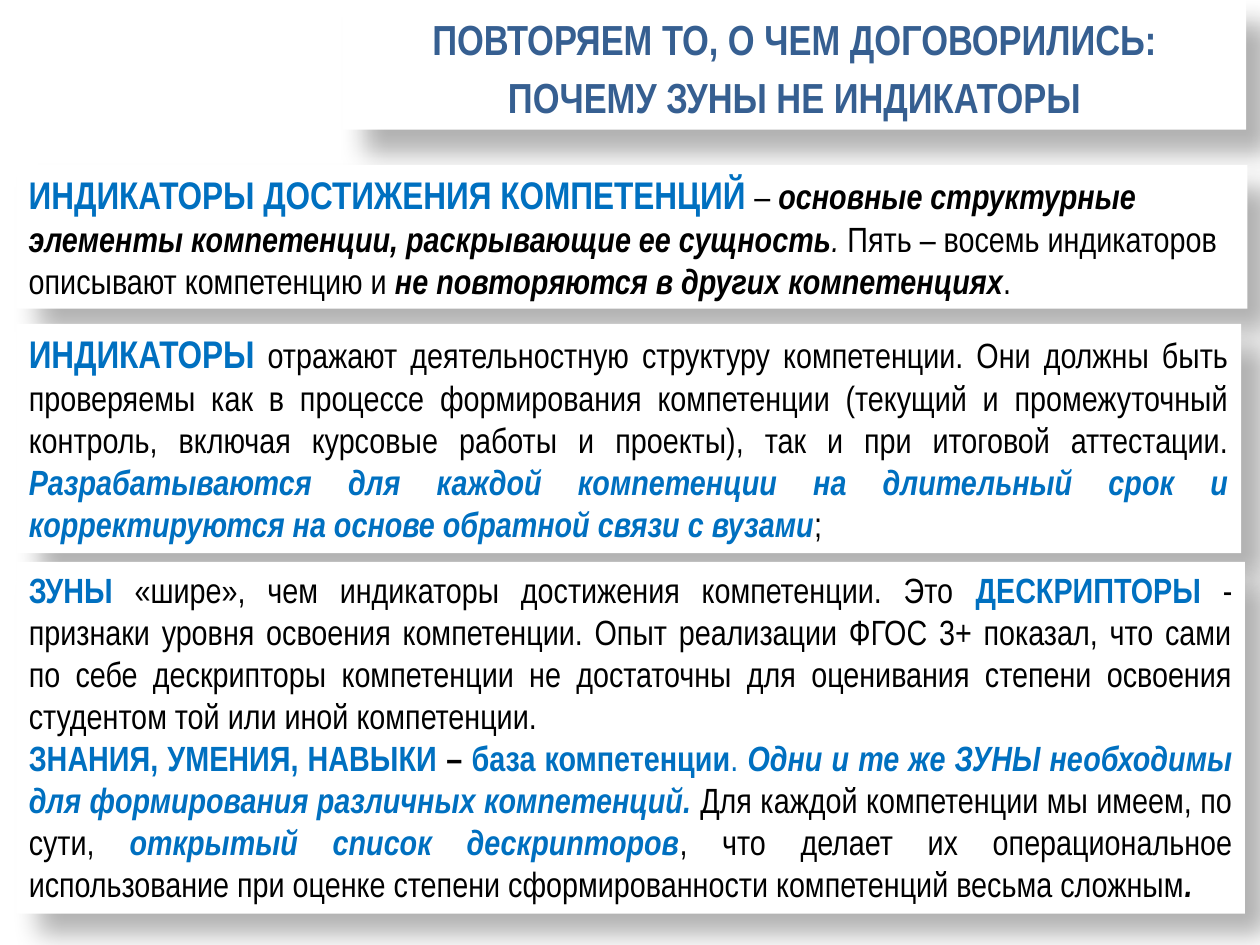
import pptx
import pptx.dml.color
import pptx.enum.shapes
import pptx.enum.text
import pptx.oxml
import pptx.oxml.ns
import pptx.util

COLORS = {"card": "FFFFFF", "title": "365F91", "accent": "0070C0",
          "body": "000000", "shadow": "000000"}
FONT = "Arial Narrow"
ALIGN = pptx.enum.text.PP_ALIGN

# style: colour, size, bold, italic
STYLES = {
    "title": ("title", 24, True, False),
    "heading": ("accent", 22, True, False),
    "term": ("accent", 20, True, False),
    "claim": ("accent", 20, True, True),
    "mark": ("accent", 20, False, False),
    "plain": ("body", 20, False, False),
    "slanted": ("body", 20, False, True),
    "bold": ("body", 20, True, False),
    "stress": ("body", 20, True, True),
}

TITLE = [[("ПОВТОРЯЕМ ТО, О ЧЕМ ДОГОВОРИЛИСЬ: ПОЧЕМУ ЗУНЫ НЕ ИНДИКАТОРЫ", "title")]]

DEFINITION = [[
    ("ИНДИКАТОРЫ ДОСТИЖЕНИЯ КОМПЕТЕНЦИЙ ", "heading"),
    ("– ", "plain"),
    ("основные структурные элементы компетенции, раскрывающие ее сущность", "stress"),
    (". ", "slanted"),
    ("Пять – восемь индикаторов описывают компетенцию и ", "plain"),
    ("не повторяются в других компетенциях", "stress"),
    (".", "plain"),
]]

INDICATORS = [[
    ("ИНДИКАТОРЫ", "heading"),
    (" отражают деятельностную структуру компетенции. Они должны быть проверяемы "
     "как в процессе формирования компетенции (текущий и промежуточный контроль, "
     "включая курсовые работы и проекты), так и при итоговой аттестации. ", "plain"),
    ("Разрабатываются для каждой компетенции на длительный срок и корректируются "
     "на основе обратной связи с вузами", "claim"),
    (";", "plain"),
]]

DESCRIPTORS = [
    [
        ("ЗУНЫ ", "term"),
        ("«шире», чем индикаторы достижения компетенции. Это ", "plain"),
        ("ДЕСКРИПТОРЫ", "term"),
        (" - признаки уровня освоения компетенции. Опыт реализации ФГОС 3+ показал, "
         "что сами по себе дескрипторы компетенции не достаточны для оценивания "
         "степени освоения студентом той или иной компетенции.", "plain"),
    ],
    [
        ("ЗНАНИЯ, УМЕНИЯ, НАВЫКИ ", "term"),
        ("– ", "bold"),
        ("база компетенции", "term"),
        (". ", "mark"),
        ("Одни и те же ЗУНЫ необходимы для формирования различных компетенций. ", "claim"),
        ("Для каждой компетенции мы имеем, по сути, ", "plain"),
        ("открытый список дескрипторов", "claim"),
        (", что делает их операциональное использование при оценке степени "
         "сформированности компетенций весьма сложным", "plain"),
        (".", "stress"),
    ],
]


def rgb(name):
    return pptx.dml.color.RGBColor.from_string(COLORS[name])


def cast_shadow(card):
    """Soft shadow: 15 pt blur, 18 pt down and to the right, 30 % opaque."""
    card.shadow.inherit = False
    properties = card._element.spPr
    effects = properties.find(pptx.oxml.ns.qn("a:effectLst"))
    effects.append(pptx.oxml.parse_xml(
        f'<a:outerShdw {pptx.oxml.ns.nsdecls("a")} blurRad="190500" dist="228600" '
        'dir="2700000" algn="ctr" rotWithShape="0">'
        f'<a:srgbClr val="{COLORS["shadow"]}"><a:alpha val="30000"/></a:srgbClr>'
        '</a:outerShdw>'))


def write_paragraph(paragraph, phrases, align):
    paragraph.alignment = align
    for words, style in phrases:
        color, size, bold, italic = STYLES[style]
        run = paragraph.add_run()
        run.text = words
        run.font.name = FONT
        run.font.size = pptx.util.Pt(size)
        run.font.bold, run.font.italic = bold, italic
        run.font.color.rgb = rgb(color)


def add_card(slide, box, paragraphs, align):
    """Place a white shadowed card of styled text in box (left, top, width, height)."""
    card = slide.shapes.add_shape(pptx.enum.shapes.MSO_SHAPE.RECTANGLE, *box)
    card.fill.solid()
    card.fill.fore_color.rgb = rgb("card")
    card.line.fill.background()
    cast_shadow(card)
    frame = card.text_frame
    frame.word_wrap = True
    frame.auto_size = pptx.enum.text.MSO_AUTO_SIZE.SHAPE_TO_FIT_TEXT
    frame.vertical_anchor = pptx.enum.text.MSO_ANCHOR.TOP
    for index, phrases in enumerate(paragraphs):
        paragraph = frame.add_paragraph() if index else frame.paragraphs[0]
        write_paragraph(paragraph, phrases, align)
    return card


def add_title(slide, box):
    heading = add_card(slide, box, TITLE, ALIGN.CENTER).text_frame.paragraphs[0]
    heading.line_spacing = 1.15
    heading.space_before = pptx.util.Pt(24)


def main():
    deck = pptx.Presentation()
    deck.slide_width, deck.slide_height = pptx.util.Inches(10), pptx.util.Inches(7.5)
    slide = deck.slides.add_slide(deck.slide_layouts[6])

    def share(left, top, width, height):
        """Turn percentages of the slide into a box."""
        return (int(deck.slide_width * left / 100), int(deck.slide_height * top / 100),
                int(deck.slide_width * width / 100), int(deck.slide_height * height / 100))

    add_title(slide, share(27.2, 0, 71.7, 13.73))
    margin = 1.3
    for top, width, height, paragraphs, align in (
            (17.47, 97.7, 15.2, DEFINITION, ALIGN.LEFT),
            (34.27, 97.2, 24.27, INDICATORS, ALIGN.JUSTIFY),
            (59.47, 97.5, 37.2, DESCRIPTORS, ALIGN.JUSTIFY)):
        add_card(slide, share(margin, top, width, height), paragraphs, align)

    deck.save("out.pptx")


if __name__ == "__main__":
    main()
